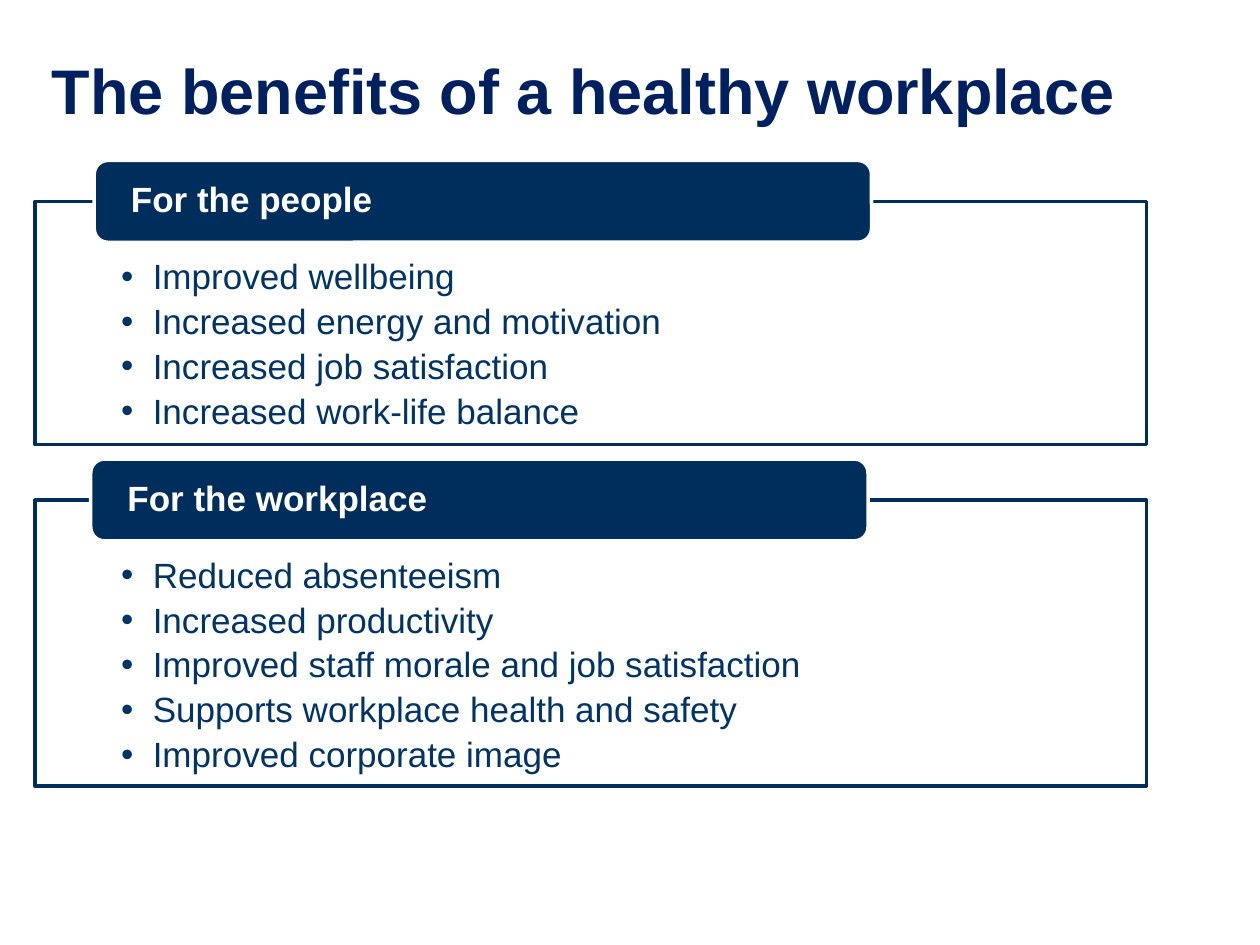
"""Build the slide on the benefits of a healthy workplace."""
from dataclasses import dataclass

import lxml.etree
import pptx
import pptx.dml.color
import pptx.enum.shapes
import pptx.enum.text
import pptx.oxml.ns
import pptx.shapes.autoshape
import pptx.shapes.placeholder
import pptx.slide
import pptx.text.text
import pptx.util
from pptx.util import Cm

NAVY = pptx.dml.color.RGBColor(0x00, 0x2E, 0x5C)
TITLE_BLUE = pptx.dml.color.RGBColor(0x00, 0x20, 0x60)
TEXT_BLUE = pptx.dml.color.RGBColor(0x00, 0x33, 0x66)
WHITE = pptx.dml.color.RGBColor(0xFF, 0xFF, 0xFF)

PANEL_LEFT, PANEL_WIDTH = Cm(0.71), Cm(22.4)
TAB_WIDTH, TAB_HEIGHT = Cm(15.67), Cm(1.65)
INDENT = Cm(0.64)


@dataclass(frozen=True)
class Panel:
    """A heading tab over a framed list of benefits."""
    heading: str
    benefits: tuple[str, ...]
    top: float
    height: float
    tab_left: float


PANELS = (
    Panel("For the people",
          ("Improved wellbeing", "Increased energy and motivation",
           "Increased job satisfaction", "Increased work-life balance"),
          4.06, 4.9, 1.9),
    Panel("For the workplace",
          ("Reduced absenteeism", "Increased productivity",
           "Improved staff morale and job satisfaction",
           "Supports workplace health and safety", "Improved corporate image"),
          10.08, 5.77, 1.83),
)


def style_font(para: pptx.text.text._Paragraph, size: int,
               color: pptx.dml.color.RGBColor, bold: bool) -> None:
    """Set the font of a whole paragraph."""
    para.font.name = "Arial"
    para.font.size = pptx.util.Pt(size)
    para.font.bold = bold
    para.font.color.rgb = color


def paint(shape: pptx.shapes.autoshape.Shape, fill: pptx.dml.color.RGBColor,
          line: pptx.dml.color.RGBColor) -> None:
    """Give a shape a solid fill and a two-point outline."""
    shape.fill.solid()
    shape.fill.fore_color.rgb = fill
    shape.line.color.rgb = line
    shape.line.width = pptx.util.Pt(2)


def set_margins(frame: pptx.text.text.TextFrame, side: float, top: float, bottom: float) -> None:
    """Set the insets of a text frame in centimetres."""
    frame.margin_left = frame.margin_right = Cm(side)
    frame.margin_top, frame.margin_bottom = Cm(top), Cm(bottom)


def add_bullet(para: pptx.text.text._Paragraph) -> None:
    """Give a paragraph a round bullet with a hanging indent."""
    properties = para._p.get_or_add_pPr()
    properties.set("marL", str(INDENT))
    properties.set("indent", str(-INDENT))
    bullet = lxml.etree.SubElement(properties, pptx.oxml.ns.qn("a:buChar"))
    bullet.set("char", "•")


def fill_list(body: pptx.shapes.placeholder.SlidePlaceholder, panel: Panel) -> None:
    """Turn a body placeholder into the framed list of a panel."""
    body.left, body.top = PANEL_LEFT, Cm(panel.top)
    body.width, body.height = PANEL_WIDTH, Cm(panel.height)
    paint(body, WHITE, NAVY)
    frame = body.text_frame
    frame.text = "\n".join(panel.benefits)
    frame.auto_size = pptx.enum.text.MSO_AUTO_SIZE.NONE
    frame.vertical_anchor = pptx.enum.text.MSO_ANCHOR.TOP
    set_margins(frame, 1.73, 1.17, 0.41)
    for para in frame.paragraphs:
        para.level = 1
        para.line_spacing = 0.9
        para.space_before = pptx.util.Pt(0)
        para.space_after = pptx.util.Pt(4)
        add_bullet(para)
        style_font(para, 20, TEXT_BLUE, False)


def add_tab(page: pptx.slide.Slide, panel: Panel) -> None:
    """Draw the heading tab centred on the top edge of a panel."""
    tab = page.shapes.add_shape(
        pptx.enum.shapes.MSO_SHAPE.ROUNDED_RECTANGLE, Cm(panel.tab_left),
        Cm(panel.top) - TAB_HEIGHT // 2, TAB_WIDTH, TAB_HEIGHT)
    tab.shadow.inherit = False
    paint(tab, NAVY, WHITE)
    frame = tab.text_frame
    frame.text = panel.heading
    frame.vertical_anchor = pptx.enum.text.MSO_ANCHOR.MIDDLE
    set_margins(frame, 0.66, 0, 0)
    para = frame.paragraphs[0]
    para.alignment = pptx.enum.text.PP_ALIGN.LEFT
    para.line_spacing = 0.9
    style_font(para, 20, WHITE, True)


def main() -> None:
    """Build and save the deck."""
    deck = pptx.Presentation()
    deck.slide_width, deck.slide_height = Cm(25.4), Cm(19.05)
    page = deck.slides.add_slide(deck.slide_layouts.get_by_name("Two Content"))

    title = page.shapes.title
    title.left, title.top, title.width, title.height = Cm(0.79), Cm(0.05), Cm(23.19), Cm(3.51)
    title.text_frame.text = "The benefits of a healthy workplace"
    title.text_frame.vertical_anchor = pptx.enum.text.MSO_ANCHOR.MIDDLE
    title.text_frame.auto_size = pptx.enum.text.MSO_AUTO_SIZE.NONE
    para = title.text_frame.paragraphs[0]
    para.alignment = pptx.enum.text.PP_ALIGN.LEFT
    style_font(para, 36, TITLE_BLUE, True)

    for number, panel in enumerate(PANELS, start=1):
        fill_list(page.placeholders[number], panel)
        add_tab(page, panel)

    deck.save("out.pptx")


if __name__ == "__main__":
    main()
